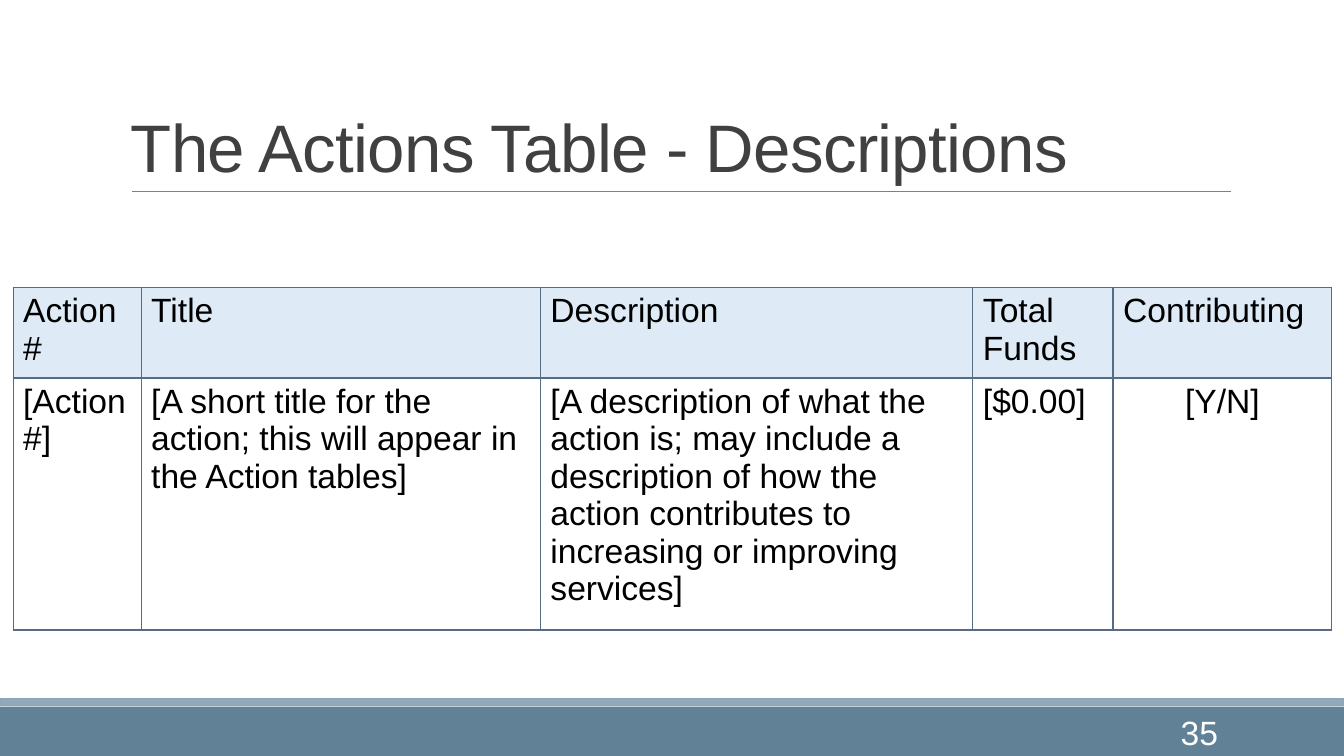
import pptx
import pptx.dml.color
import pptx.enum.shapes
import pptx.enum.text
import pptx.oxml
import pptx.oxml.ns
import pptx.util

WIDTH, HEIGHT = 13.33, 7.5
FONT = "Arial"
COLORS = {
    "band": "618197",
    "stripe": "92A9B9",
    "stripe_line": "8FA3B6",
    "rule": "808080",
    "title": "404040",
    "border": "566C83",
    "header": "DEEBF6",
    "text": "000000",
    "white": "FFFFFF",
}
COLUMN_WIDTHS = [1.27, 3.96, 4.29, 1.39, 2.17]
ROW_HEIGHTS = [0.84, 2.33]
ACTION_ROWS = [
    ["Action #", "Title", "Description", "Total Funds", "Contributing"],
    [
        "[Action #]",
        "[A short title for the action; this will appear in the Action tables]",
        "[A description of what the action is; may include a description of how "
        "the action contributes to increasing or improving services]",
        "[$0.00]",
        "[Y/N]",
    ],
]
ALIGN = pptx.enum.text.PP_ALIGN
ANCHOR = pptx.enum.text.MSO_ANCHOR


def inches(*values):
    return [pptx.util.Inches(value) for value in values]


def color(name):
    return pptx.dml.color.RGBColor.from_string(COLORS[name])


def write(text_frame, text, size, color_name, align=ALIGN.LEFT):
    text_frame.text = text
    paragraph = text_frame.paragraphs[0]
    paragraph.alignment = align
    font = paragraph.runs[0].font
    font.name = FONT
    font.size = pptx.util.Pt(size)
    font.color.rgb = color(color_name)
    return paragraph


def add_band(slide, top, height, fill, line=None):
    shape = slide.shapes.add_shape(
        pptx.enum.shapes.MSO_SHAPE.RECTANGLE, *inches(0, top, WIDTH, height)
    )
    shape.shadow.inherit = False
    shape.fill.solid()
    shape.fill.fore_color.rgb = color(fill)
    if line:
        shape.line.color.rgb = color(line)
        shape.line.width = pptx.util.Pt(1.25)
    else:
        shape.line.fill.background()


def add_rule(slide, left, right, top):
    rule = slide.shapes.add_connector(
        pptx.enum.shapes.MSO_CONNECTOR.STRAIGHT, *inches(left, top, right, top)
    )
    rule.line.color.rgb = color("rule")
    rule.line.width = pptx.util.Pt(0.5)
    properties = rule._element.spPr
    properties.append(pptx.oxml.parse_xml(
        f"<a:effectLst {pptx.oxml.ns.nsdecls('a')}/>"
    ))


def add_text(slide, box, anchor, text, size, color_name, align=ALIGN.LEFT):
    text_frame = slide.shapes.add_textbox(*inches(*box)).text_frame
    text_frame.word_wrap = True
    text_frame.vertical_anchor = anchor
    return write(text_frame, text, size, color_name, align)


def add_borders(cell):
    properties = cell._tc.get_or_add_tcPr()
    for position, side in enumerate(("lnL", "lnR", "lnT", "lnB")):
        properties.insert(position, pptx.oxml.parse_xml(
            f"<a:{side} {pptx.oxml.ns.nsdecls('a')} w=\"12700\"><a:solidFill>"
            f"<a:srgbClr val=\"{COLORS['border']}\"/></a:solidFill></a:{side}>"
        ))


def add_actions_table(slide, left, top):
    frame = slide.shapes.add_table(
        len(ROW_HEIGHTS), len(COLUMN_WIDTHS),
        *inches(left, top, sum(COLUMN_WIDTHS), sum(ROW_HEIGHTS)),
    )
    table = frame.table
    table.horz_banding = False
    table.first_row = False
    for column, width in zip(table.columns, COLUMN_WIDTHS):
        column.width = pptx.util.Inches(width)
    for row, height in zip(table.rows, ROW_HEIGHTS):
        row.height = pptx.util.Inches(height)
    for row_index, texts in enumerate(ACTION_ROWS):
        for column_index, text in enumerate(texts):
            cell = table.cell(row_index, column_index)
            if row_index == 0:
                cell.fill.solid()
                cell.fill.fore_color.rgb = color("header")
            else:
                cell.fill.background()
            add_borders(cell)
            align = ALIGN.CENTER if text == "[Y/N]" else ALIGN.LEFT
            write(cell.text_frame, text, 24, "text", align)


def main():
    presentation = pptx.Presentation()
    presentation.slide_width, presentation.slide_height = inches(WIDTH, HEIGHT)
    slide = presentation.slides.add_slide(presentation.slide_layouts[6])
    add_band(slide, 7.01, HEIGHT - 7.01, "band")
    add_band(slide, 6.93, 0.07, "stripe", "stripe_line")
    add_rule(slide, 1.31, 12.21, 1.9)
    title = add_text(
        slide, (1.2, 0.31, 11, 1.59), ANCHOR.BOTTOM,
        "The Actions Table - Descriptions", 48, "title",
    )
    title.line_spacing = 0.85
    title.runs[0].font._element.set("spc", "-50")
    add_actions_table(slide, 0.13, 2.85)
    add_text(
        slide, (10.75, 7.06, 1.43, 0.4), ANCHOR.MIDDLE,
        "35", 24, "white", ALIGN.RIGHT,
    )
    presentation.save("out.pptx")


if __name__ == "__main__":
    main()
